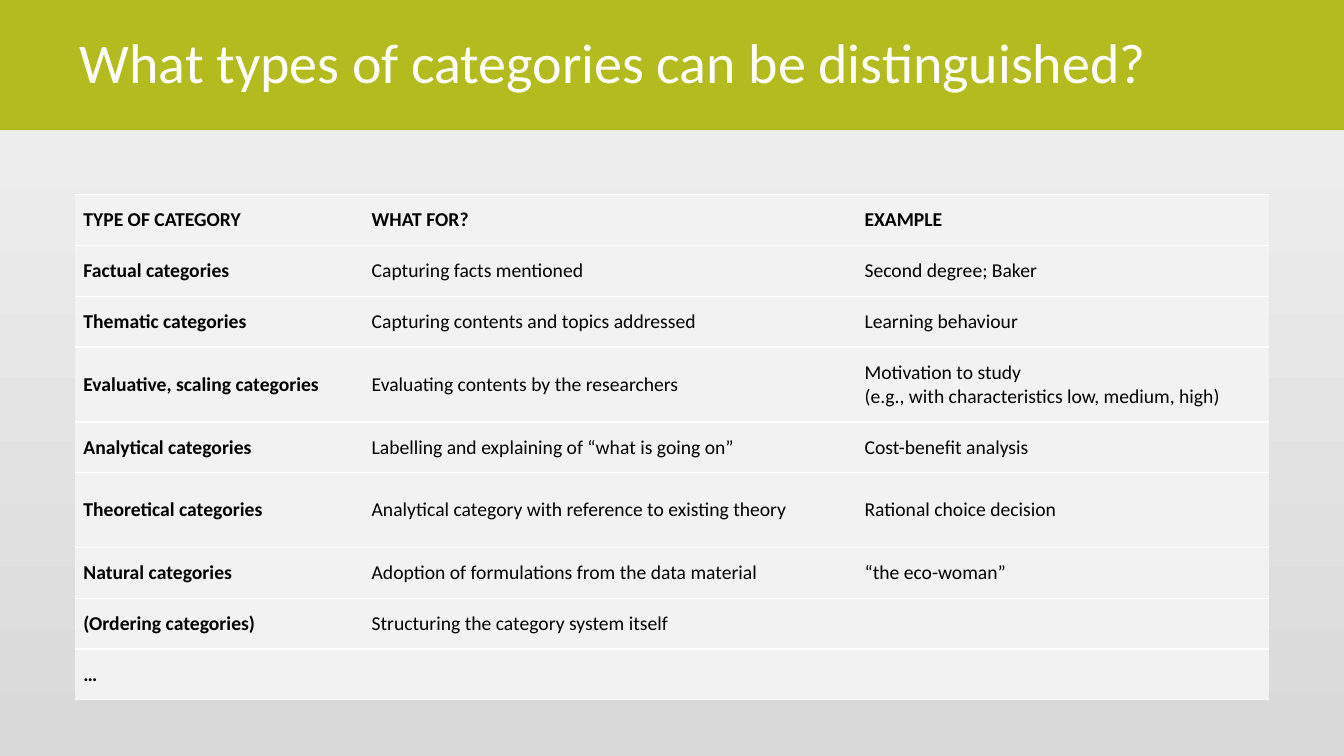
from dataclasses import dataclass

from lxml.etree import SubElement
from pptx import Presentation
from pptx.dml.color import RGBColor
from pptx.enum.shapes import MSO_SHAPE
from pptx.enum.text import MSO_ANCHOR, PP_ALIGN
from pptx.oxml.ns import qn
from pptx.slide import Slide
from pptx.table import _Cell
from pptx.text.text import TextFrame
from pptx.util import Pt


@dataclass(frozen=True)
class Theme:
    font: str = "Calibri"
    title_size: float = 40
    cell_size: float = 14
    banner: str = "B3BB1F"
    white: str = "FFFFFF"
    black: str = "000000"
    light: str = "F2F2F2"
    grey: str = "D9D9D9"


@dataclass(frozen=True)
class Category:
    name: str
    purpose: str = ""
    example: str = ""
    height: float = 36.25


THEME = Theme()
TALL = 53.5
COLUMN_WIDTHS = (205.9, 352.1, 295.2)
CATEGORIES = (
    Category("TYPE OF CATEGORY", "WHAT FOR?", "EXAMPLE"),
    Category("Factual categories", "Capturing facts mentioned", "Second degree; Baker"),
    Category("Thematic categories", "Capturing contents and topics addressed", "Learning behaviour"),
    Category("Evaluative, scaling categories", "Evaluating contents by the researchers",
             "Motivation to study \n(e.g., with characteristics low, medium, high)", TALL),
    Category("Analytical categories", "Labelling and explaining of “what is going on”",
             "Cost-benefit analysis"),
    Category("Theoretical categories", "Analytical category with reference to existing theory",
             "Rational choice decision", TALL),
    Category("Natural categories", "Adoption of formulations from the data material",
             "“the eco-woman”"),
    Category("(Ordering categories)", "Structuring the category system itself"),
    Category("…"),
)


def rgb(value: str) -> RGBColor:
    return RGBColor.from_string(value)


def write(tf: TextFrame, text: str, *, size: float, color: str,
          bold: bool = False, spacing: float = 1.0) -> None:
    p = tf.paragraphs[0]
    p.alignment = PP_ALIGN.LEFT
    p.line_spacing = spacing
    for i, line in enumerate(text.split("\n")):
        if i:
            p.add_line_break()
        r = p.add_run()
        r.text = line
        r.font.name = THEME.font
        r.font.size = Pt(size)
        r.font.bold = bold
        r.font.color.rgb = rgb(color)


def set_background(s: Slide) -> None:
    fill = s.background.fill
    fill.gradient()
    fill.gradient_angle = 270
    for stop, color in zip(fill.gradient_stops, (THEME.light, THEME.grey)):
        stop.color.rgb = rgb(color)


def add_title(s: Slide, text: str) -> None:
    sp = s.shapes.add_shape(MSO_SHAPE.RECTANGLE, Pt(0), Pt(0), Pt(960), Pt(92.9))
    sp.shadow.inherit = False
    sp.fill.solid()
    sp.fill.fore_color.rgb = rgb(THEME.banner)
    sp.line.fill.background()
    tf = sp.text_frame
    tf.word_wrap = True
    tf.vertical_anchor = MSO_ANCHOR.MIDDLE
    tf.margin_left, tf.margin_right = Pt(56.9), Pt(7.2)
    tf.margin_top = tf.margin_bottom = Pt(3.6)
    write(tf, text, size=THEME.title_size, color=THEME.white, spacing=0.9)


def set_borders(cell: _Cell) -> None:
    props = cell._tc.get_or_add_tcPr()
    for side in ("a:lnL", "a:lnR"):
        SubElement(SubElement(props, qn(side), w="0"), qn("a:noFill"))
    for side in ("a:lnT", "a:lnB"):
        line = SubElement(props, qn(side), w=str(Pt(1)))
        SubElement(SubElement(line, qn("a:solidFill")), qn("a:srgbClr"), val=THEME.white)


def format_cell(cell: _Cell, text: str, bold: bool) -> None:
    set_borders(cell)
    cell.fill.solid()
    cell.fill.fore_color.rgb = rgb(THEME.light)
    cell.vertical_anchor = MSO_ANCHOR.MIDDLE
    cell.margin_left = cell.margin_right = Pt(6.2)
    cell.margin_top = cell.margin_bottom = Pt(7.2)
    write(cell.text_frame, text, size=THEME.cell_size, color=THEME.black, bold=bold)


def add_categories(s: Slide) -> None:
    height = sum(category.height for category in CATEGORIES)
    table = s.shapes.add_table(len(CATEGORIES), len(COLUMN_WIDTHS), Pt(53.4), Pt(139.2),
                               Pt(sum(COLUMN_WIDTHS)), Pt(height)).table
    table.horz_banding = False
    for column, width in zip(table.columns, COLUMN_WIDTHS):
        column.width = Pt(width)
    for i, category in enumerate(CATEGORIES):
        table.rows[i].height = Pt(category.height)
        for j, text in enumerate((category.name, category.purpose, category.example)):
            format_cell(table.cell(i, j), text, bold=i == 0 or j == 0)


def main() -> None:
    prs = Presentation()
    prs.slide_width, prs.slide_height = Pt(960), Pt(540)
    s = prs.slides.add_slide(prs.slide_layouts[6])
    set_background(s)
    add_title(s, "What types of categories can be distinguished?")
    add_categories(s)
    prs.save("out.pptx")


if __name__ == "__main__":
    main()
